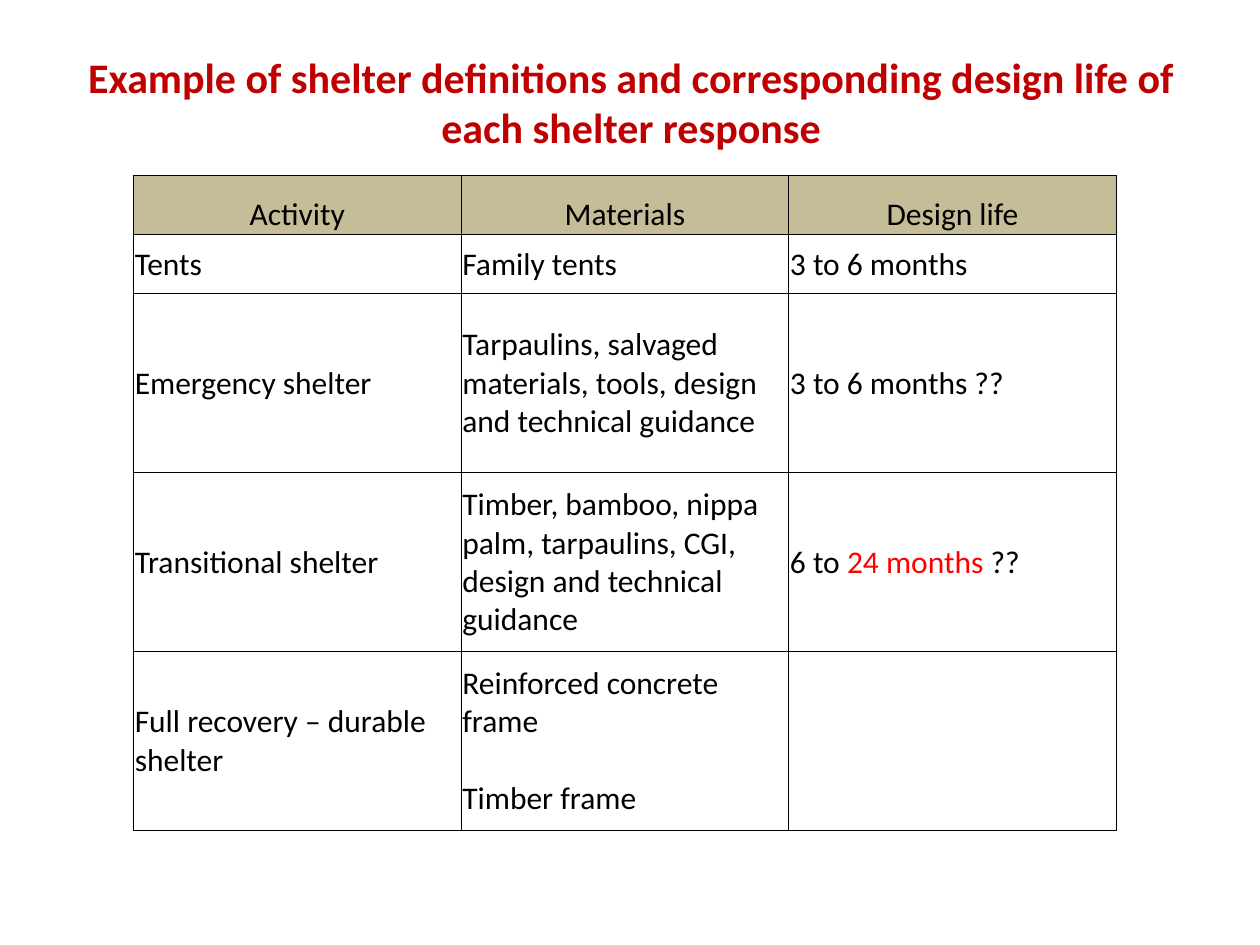
from lxml.etree import SubElement
from pptx import Presentation
from pptx.dml.color import RGBColor
from pptx.enum.text import MSO_ANCHOR as Anchor, PP_ALIGN as Align
from pptx.oxml.ns import qn
from pptx.util import Inches, Pt

BLACK = RGBColor(0x00, 0x00, 0x00)
RED = RGBColor(0xFF, 0x00, 0x00)
CRIMSON = RGBColor(0xC0, 0x00, 0x00)
TAN = RGBColor(0xC4, 0xBD, 0x97)

TITLE = ("Example of shelter definitions and corresponding design life of "
         "each shelter response")

# A cell is a string, or a list of paragraphs; a paragraph is a string
# or a list of (text, colour) runs.
ROWS = [
    ["Activity", "Materials", "Design life"],
    ["Tents", "Family tents", "3 to 6 months"],
    ["Emergency shelter",
     "Tarpaulins, salvaged materials, tools, design and technical guidance",
     "3 to 6 months ??"],
    ["Transitional shelter",
     "Timber, bamboo, nippa palm, tarpaulins, CGI, design and technical "
     "guidance",
     [[("6 to ", BLACK), ("24 months ", RED), ("??", BLACK)]]],
    ["Full recovery – durable shelter",
     ["Reinforced concrete frame", "Timber frame"], ""],
]
HEIGHTS = [0.47, 0.47, 1.42, 1.42, 1.42]


def write(frame, text, font="Calibri", size=18, color=BLACK, bold=False,
          align=Align.LEFT, gap=0):
    """Fill a text frame; gap is the space in points between paragraphs."""
    paras = [text] if isinstance(text, str) else text
    for i, para in enumerate(paras):
        par = frame.add_paragraph() if i else frame.paragraphs[0]
        par.alignment = align
        par.font.size = Pt(size)
        if i:
            par.space_before = Pt(gap)
        runs = [(para, color)] if isinstance(para, str) else para
        for words, tint in runs:
            if not words:
                continue
            run = par.add_run()
            run.text = words
            run.font.name = font
            run.font.size = Pt(size)
            run.font.bold = bold
            run.font.color.rgb = tint


class Deck:
    """Holds the table style and the current slide."""
    head = TAN
    line = BLACK
    width = 0.5

    def __init__(self, slide):
        self.slide = slide

    def title(self, text, left, top, width, height):
        box = self.slide.shapes.add_textbox(
            Inches(left), Inches(top), Inches(width), Inches(height))
        box.text_frame.word_wrap = True
        write(box.text_frame, text, size=24, color=CRIMSON, bold=True,
              align=Align.CENTER)

    def edge(self, cell):
        props = cell._tc.get_or_add_tcPr()
        for i, side in enumerate(("lnL", "lnR", "lnT", "lnB")):
            line = SubElement(props, qn("a:" + side),
                              w=str(Pt(self.width)))
            fill = SubElement(line, qn("a:solidFill"))
            SubElement(fill, qn("a:srgbClr"), val=str(self.line))
            props.insert(i, line)  # borders come before the fill

    def cell(self, cell, text, head):
        cell.margin_left = cell.margin_right = Inches(0.01)
        cell.margin_top, cell.margin_bottom = Inches(0.01), 0
        cell.vertical_anchor = Anchor.BOTTOM if head else Anchor.MIDDLE
        if head:
            cell.fill.solid()
            cell.fill.fore_color.rgb = self.head
        else:
            cell.fill.background()
        self.edge(cell)
        write(cell.text_frame, text, gap=22,
              align=Align.CENTER if head else Align.LEFT)

    def table(self, rows, heights, left, top, col):
        count = len(rows[0])
        grid = self.slide.shapes.add_table(
            len(rows), count, Inches(left), Inches(top),
            Inches(col * count), Inches(sum(heights))).table
        grid.horz_banding = False
        for column in grid.columns:
            column.width = Inches(col)
        for r, (row, height) in enumerate(zip(rows, heights)):
            grid.rows[r].height = Inches(height)
            for c, text in enumerate(row):
                self.cell(grid.cell(r, c), text, head=r == 0)


def main():
    prs = Presentation()
    prs.slide_width, prs.slide_height = Inches(10), Inches(7.5)
    deck = Deck(prs.slides.add_slide(prs.slide_layouts[6]))

    # Shelter table
    deck.table(ROWS, HEIGHTS, left=1.06, top=1.39, col=2.6)

    # Heading
    deck.title(TITLE, 0.51, 0.36, 9, 0.79)

    prs.save("out.pptx")


if __name__ == "__main__":
    main()
